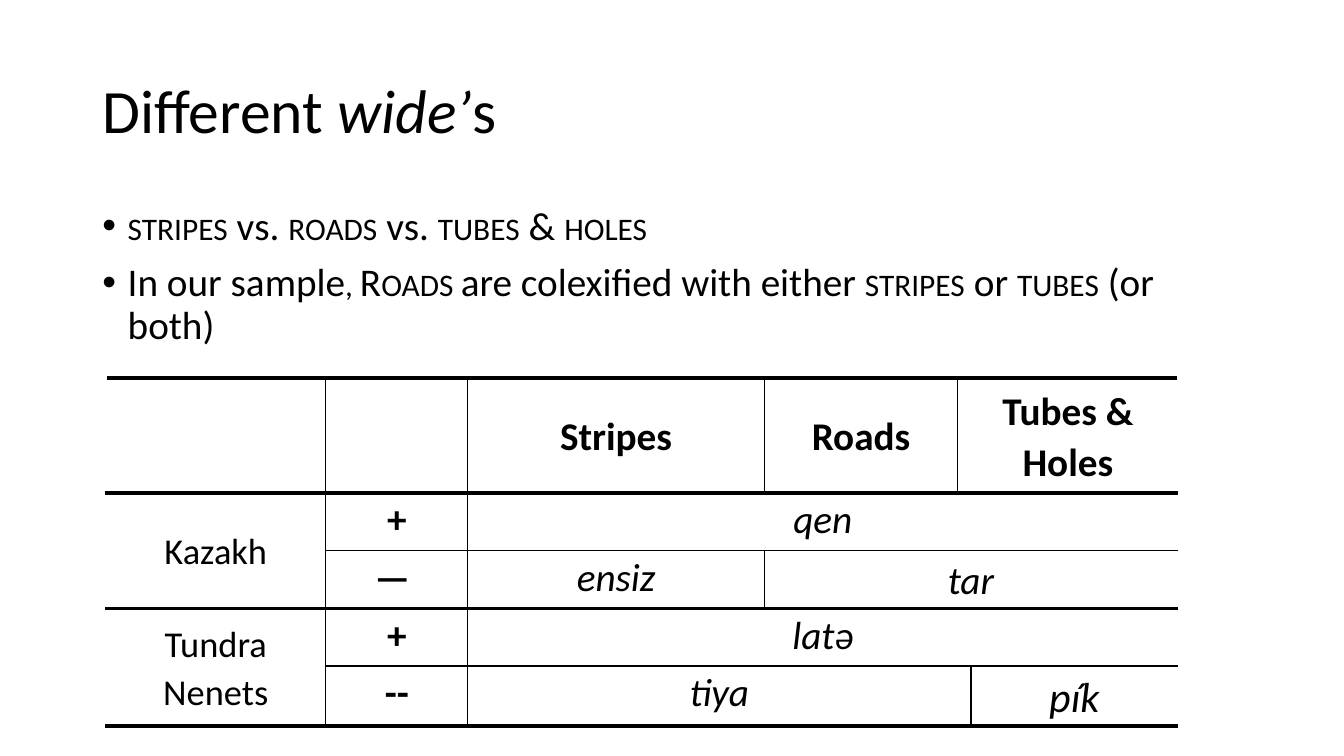
from dataclasses import dataclass

from lxml.etree import SubElement
from pptx import Presentation
from pptx.dml.color import RGBColor
from pptx.enum.text import MSO_ANCHOR as Anchor, MSO_AUTO_SIZE as AutoSize, PP_ALIGN as Align
from pptx.oxml.ns import qn
from pptx.util import Cm, Pt

COLORS = {"ink": "000000", "paper": "FFFFFF"}
FONT = "Calibri"
THIN, THICK = 1, 3


@dataclass(frozen=True)
class Run:
    text: str
    italic: bool = False
    small_caps: bool = False


@dataclass(frozen=True)
class Entry:
    row: int
    col: int
    text: str = ""
    rows: int = 1
    cols: int = 1
    size: int = 28
    bold: bool = False
    italic: bool = False
    anchor: Anchor = Anchor.TOP


def small(text: str) -> Run:
    return Run(text, small_caps=True)


def word(row: int, col: int, text: str, cols: int = 1, size: int = 28,
         anchor: Anchor = Anchor.TOP) -> Entry:
    return Entry(row, col, text, cols=cols, size=size, italic=True, anchor=anchor)


def header(col: int, text: str = "", cols: int = 1) -> Entry:
    return Entry(0, col, text, cols=cols, bold=True, anchor=Anchor.MIDDLE)


def language(row: int, text: str) -> Entry:
    return Entry(row, 0, text, rows=2, size=26, anchor=Anchor.MIDDLE)


def polarity(row: int, text: str) -> Entry:
    return Entry(row, 1, text, bold=True)


TITLE = [Run("Different "), Run("wide’", italic=True), Run("s")]
BULLETS = [
    [small("stripes"), Run(" vs. "), small("roads"), Run(" vs. "),
     small("tubes"), Run(" & "), small("holes")],
    [Run("In our sample"), small(", Roads "), Run("are colexified with either "),
     small("stripes"), Run(" or "), small("tubes"), Run(" (or both)")],
]
COL_WIDTHS = [5.54, 3.58, 7.47, 4.88, 0.33, 5.21]
ROW_HEIGHTS = [2.9, 1.45, 1.45, 1.45, 1.52]
THICK_RULES = {0, 1, 3, 5}  # row boundaries that separate the groups
ENTRIES = [
    header(0), header(1), header(2, "Stripes"), header(3, "Roads"),
    header(4, "Tubes & Holes", cols=2),
    language(1, "Kazakh"),
    polarity(1, "+"), word(1, 2, "qen", cols=4),
    polarity(2, "— "), word(2, 2, "ensiz"),
    word(2, 3, "tar", cols=3, anchor=Anchor.MIDDLE),
    language(3, "Tundra Nenets"),
    polarity(3, "+"), word(3, 2, "latə", cols=4),
    polarity(4, "--"), word(4, 2, "tiya", cols=3),
    word(4, 5, "pík", size=30, anchor=Anchor.MIDDLE),
]


def apply(target, values: dict) -> None:
    for name, value in values.items():
        setattr(target, name, value)


def add_run(p, text: str, size: int, bold: bool = False, italic: bool = False,
            small_caps: bool = False) -> None:
    r = p.add_run()
    r.text = text
    apply(r.font, {"name": FONT, "size": Pt(size), "bold": bold, "italic": italic})
    r.font.color.rgb = RGBColor.from_string(COLORS["ink"])
    if small_caps:
        r.font._element.set("cap", "small")


def add_bullet(p) -> None:
    pPr = p._p.get_or_add_pPr()
    pPr.set("marL", str(Cm(0.64)))
    pPr.set("indent", str(-Cm(0.64)))
    SubElement(pPr, qn("a:buFont"), typeface="Arial")
    SubElement(pPr, qn("a:buChar"), char="•")


def draw_title(slide) -> None:
    sp = slide.shapes.title
    apply(sp, {"left": Cm(2.33), "top": Cm(1.02), "width": Cm(29.21), "height": Cm(3.68)})
    tf = sp.text_frame
    apply(tf, {"word_wrap": True, "vertical_anchor": Anchor.MIDDLE, "auto_size": AutoSize.NONE})
    p = tf.paragraphs[0]
    apply(p, {"alignment": Align.LEFT, "line_spacing": 0.9})
    for part in TITLE:
        add_run(p, part.text, 44, italic=part.italic)


def draw_bullets(slide) -> None:
    tf = slide.shapes.add_textbox(Cm(2.33), Cm(5.08), Cm(29.21), Cm(12.09)).text_frame
    tf.word_wrap = True
    for i, parts in enumerate(BULLETS):
        p = tf.add_paragraph() if i else tf.paragraphs[0]
        apply(p, {"line_spacing": 0.9, "space_before": Pt(10)})
        add_bullet(p)
        for part in parts:
            add_run(p, part.text, 28, small_caps=part.small_caps)


def add_border(cell, tag: str, color: str, width: int) -> None:
    ln = SubElement(cell._tc.get_or_add_tcPr(), qn(tag), w=str(Pt(width)))
    SubElement(SubElement(ln, qn("a:solidFill")), qn("a:srgbClr"), val=COLORS[color])


def format_cell(cell, entry: Entry, row: int, col: int) -> None:
    """Fill a grid cell and rule those of its edges that bound the entry."""
    end_row, end_col = entry.row + entry.rows, entry.col + entry.cols
    origin = (row, col) == (entry.row, entry.col)
    edges = [
        ("a:lnL", col == entry.col, "ink" if entry.col else "paper", THIN),
        ("a:lnR", origin or col + 1 == end_col,
         "ink" if end_col < len(COL_WIDTHS) else "paper", THIN),
        ("a:lnT", row == entry.row, "ink", THICK if entry.row in THICK_RULES else THIN),
        ("a:lnB", origin or row + 1 == end_row, "ink",
         THICK if end_row in THICK_RULES else THIN),
    ]
    for tag, shown, color, width in edges:
        if shown:
            add_border(cell, tag, color, width)
    cell.fill.solid()
    cell.fill.fore_color.rgb = RGBColor.from_string(COLORS["paper"])


def draw_entry(table, entry: Entry) -> None:
    for row in range(entry.row, entry.row + entry.rows):
        for col in range(entry.col, entry.col + entry.cols):
            format_cell(table.cell(row, col), entry, row, col)
    cell = table.cell(entry.row, entry.col)
    if entry.rows * entry.cols > 1:
        cell.merge(table.cell(entry.row + entry.rows - 1, entry.col + entry.cols - 1))
    apply(cell, {"margin_left": Cm(0.18), "margin_right": Cm(0.18), "margin_top": 0,
                 "margin_bottom": 0, "vertical_anchor": entry.anchor})
    if entry.text:
        p = cell.text_frame.paragraphs[0]
        apply(p, {"alignment": Align.CENTER, "line_spacing": 1.07, "space_before": Pt(3)})
        add_run(p, entry.text, entry.size, entry.bold, entry.italic)


def draw_table(slide) -> None:
    table = slide.shapes.add_table(
        len(ROW_HEIGHTS), len(COL_WIDTHS), Cm(2.67), Cm(9.53),
        Cm(sum(COL_WIDTHS)), Cm(sum(ROW_HEIGHTS))).table
    apply(table, {"first_row": False, "horz_banding": False})
    for column, width in zip(table.columns, COL_WIDTHS):
        column.width = Cm(width)
    for row, height in zip(table.rows, ROW_HEIGHTS):
        row.height = Cm(height)
    for entry in ENTRIES:
        draw_entry(table, entry)


def main() -> None:
    prs = Presentation()
    apply(prs, {"slide_width": Cm(33.87), "slide_height": Cm(19.05)})
    slide = prs.slides.add_slide(prs.slide_layouts[5])  # title only
    draw_title(slide)
    draw_bullets(slide)
    draw_table(slide)
    prs.save("out.pptx")


if __name__ == "__main__":
    main()
